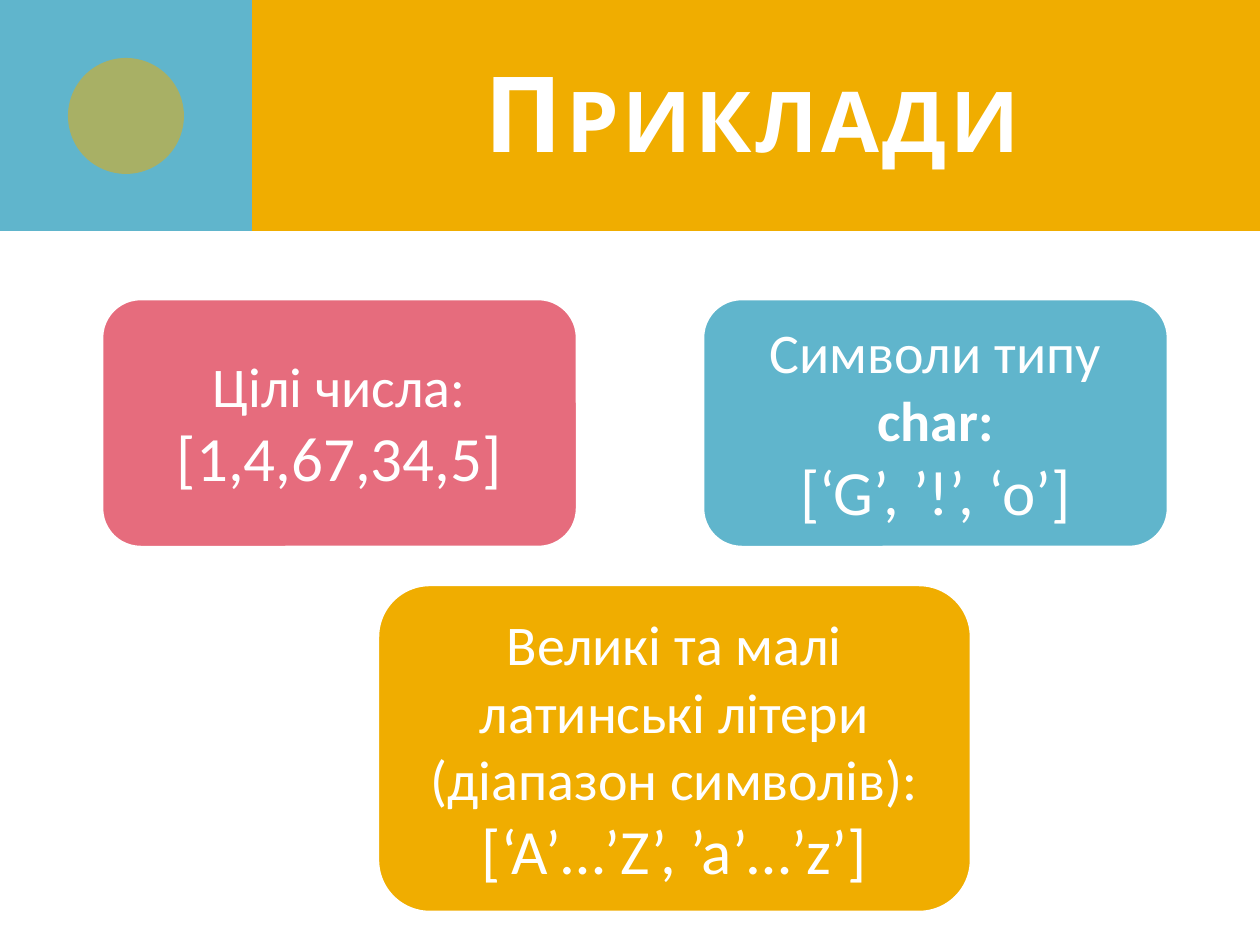
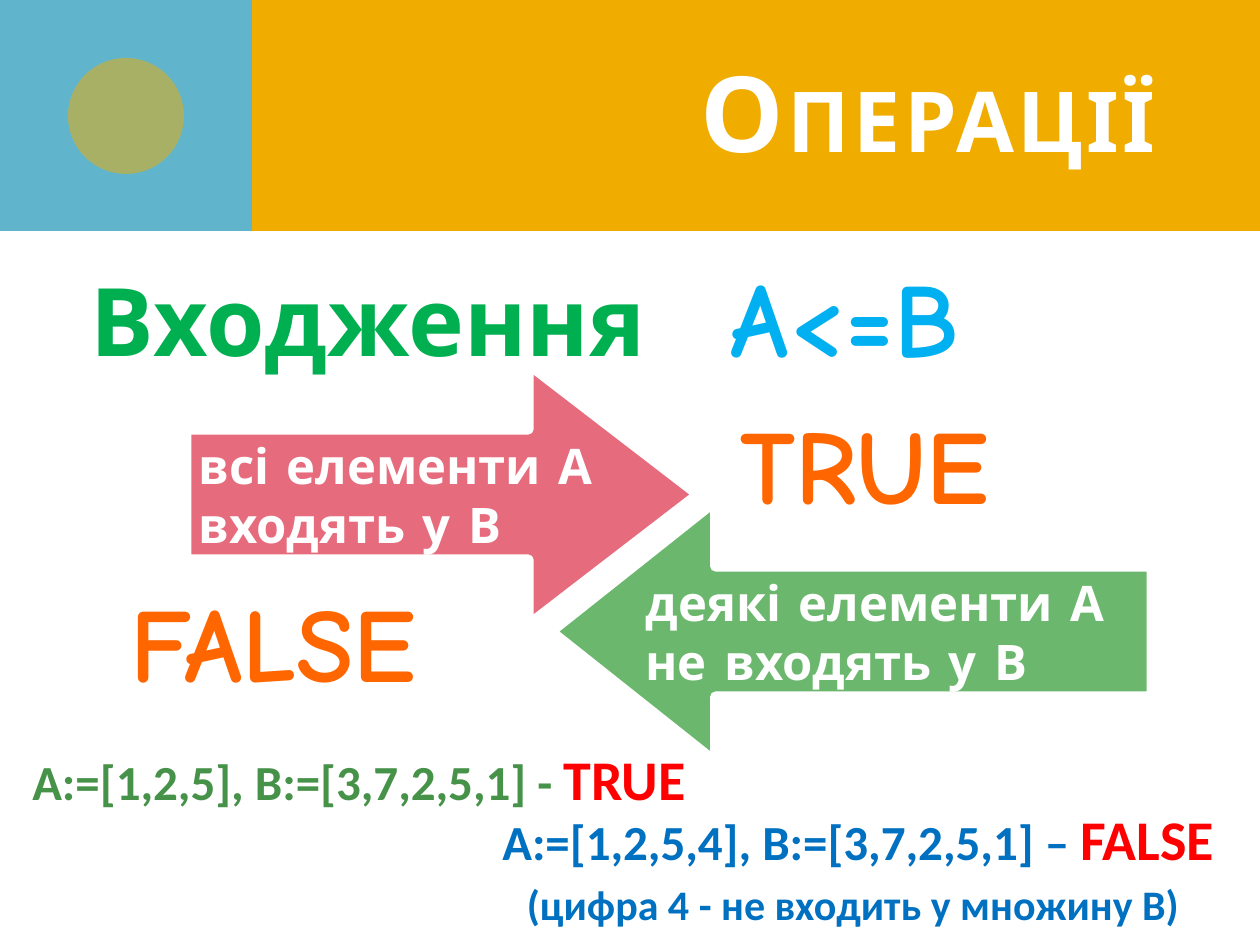
from dataclasses import dataclass
from typing import NamedTuple, Optional

import lxml.etree
import pptx
import pptx.dml.color
import pptx.enum.shapes
import pptx.enum.text
import pptx.oxml.ns
import pptx.util

EMU_PER_PX = 914400 / 126
COLORS = {
    "white": "FFFFFF",
    "amber": "F0AD00",
    "sky": "60B5CC",
    "rose": "E66C7D",
    "leaf": "6BB76D",
    "heading": "00B050",
    "formula": "00B0F0",
    "answer": "FF6600",
    "true_example": "479249",
    "false_example": "0070C0",
    "result": "FF0000",
}
DISPLAY_FONT = "Comic Neue"
BODY_FONT = "Calibri"
TITLE_ONLY_LAYOUT = 5
OUTLINE_POINTS = 6

SHAPES = pptx.enum.shapes.MSO_SHAPE
ALIGN = pptx.enum.text.PP_ALIGN
ANCHOR = pptx.enum.text.MSO_ANCHOR
AUTO_SIZE = pptx.enum.text.MSO_AUTO_SIZE


class Box(NamedTuple):
    left: int
    top: int
    width: int
    height: int


class Run(NamedTuple):
    text: str
    size: int
    color: str = "white"
    bold: bool = False
    font: str = BODY_FONT


@dataclass(frozen=True)
class Line:
    runs: tuple[Run, ...]
    align: pptx.enum.text.PP_ALIGN = ALIGN.LEFT


@dataclass(frozen=True)
class Panel:
    """A filled, white-outlined shape with text."""
    kind: pptx.enum.shapes.MSO_SHAPE
    box: Box
    fill: str
    lines: tuple[Line, ...]
    anchor: pptx.enum.text.MSO_ANCHOR
    adjustments: tuple[float, ...] = ()


@dataclass(frozen=True)
class Label:
    box: Box
    lines: tuple[Line, ...]
    wrap: bool = True


def card(box: Box, fill: str, caption: tuple[Run, ...], example: str) -> Panel:
    lines = (Line(caption, ALIGN.CENTER), Line((Run(example, 36),), ALIGN.CENTER))
    return Panel(SHAPES.ROUNDED_RECTANGLE, box, fill, lines, ANCHOR.MIDDLE)


def arrow(kind: pptx.enum.shapes.MSO_SHAPE, box: Box, fill: str, text: str, head: float) -> Panel:
    return Panel(kind, box, fill, display_line(text, 28, "white"), ANCHOR.TOP, (0.5, head))


def display_line(text: str, size: int, color: str) -> tuple[Line, ...]:
    return (Line((Run(text, size, color, True, DISPLAY_FONT),)),)


def example_line(text: str, color: str, result: str) -> Line:
    return Line((Run(text, 28, color, True), Run(result, 32, "result", True)))


CARDS = (
    card(Box(98, 295, 483, 256), "rose", (Run("Цілі числа:", 32),), "[1,4,67,34,5]"),
    card(Box(699, 295, 473, 256), "sky",
         (Run("Символи типу ", 32), Run("char:", 32, bold=True)), "[‘G’, ’!’, ‘o’]"),
    card(Box(374, 581, 601, 335), "amber",
         (Run("Великі та малі латинські літери (діапазон символів):", 32),),
         "[‘A’…’Z’, ’a’…’z’]"),
)
ARROWS = (
    arrow(SHAPES.LEFT_ARROW, Box(551, 501, 601, 261), "leaf",
          "деякі елементи А не входять у В", 0.63),
    arrow(SHAPES.RIGHT_ARROW, Box(186, 364, 512, 261), "rose",
          "всі елементи А входять у В", 0.65),
)
LABELS = (
    Label(Box(78, 256, 847, 127), display_line("Входження", 54, "heading")),
    Label(Box(718, 246, 493, 140), display_line("A<=B", 60, "formula")),
    Label(Box(728, 393, 344, 140), display_line("TRUE", 60, "answer")),
    Label(Box(118, 571, 394, 140), display_line("FALSE", 60, "answer")),
    Label(Box(20, 738, 709, 81),
          (example_line("A:=[1,2,5], B:=[3,7,2,5,1] - ", "true_example", "TRUE"),)),
    Label(Box(490, 798, 747, 140), (
        example_line("A:=[1,2,5,4], B:=[3,7,2,5,1] – ", "false_example", "FALSE"),
        Line((Run("(цифра 4 - не входить у множину В)", 24, "false_example", True),
              Run(" ", 28, "false_example", True)), ALIGN.CENTER),
    ), wrap=False),
)


def px(length: int) -> pptx.util.Emu:
    return pptx.util.Emu(round(length * EMU_PER_PX))


def rgb(name: str) -> pptx.dml.color.RGBColor:
    return pptx.dml.color.RGBColor.from_string(COLORS[name])


def format_run(run, style: Run) -> None:
    run.font.name = style.font
    run.font.size = pptx.util.Pt(style.size)
    run.font.bold = style.bold
    run.font.color.rgb = rgb(style.color)


def write_lines(text_frame, lines: tuple[Line, ...]) -> None:
    text_frame.text = "\n".join("" for _ in lines)
    for paragraph, line in zip(text_frame.paragraphs, lines):
        paragraph.alignment = line.align
        for style in line.runs:
            run = paragraph.add_run()
            run.text = style.text
            format_run(run, style)


def add_filled_shape(slide, kind: pptx.enum.shapes.MSO_SHAPE, box: Box, fill: str,
                     opacity: Optional[int] = None):
    shape = slide.shapes.add_shape(kind, *map(px, box))
    shape.shadow.inherit = False
    shape.fill.solid()
    shape.fill.fore_color.rgb = rgb(fill)
    shape.line.fill.background()
    if opacity is not None:
        color = shape._element.spPr.find(".//" + pptx.oxml.ns.qn("a:srgbClr"))
        alpha = lxml.etree.SubElement(color, pptx.oxml.ns.qn("a:alpha"))
        alpha.set("val", str(opacity * 1000))
    return shape


def add_panel(slide, panel: Panel) -> None:
    shape = add_filled_shape(slide, panel.kind, panel.box, panel.fill)
    shape.line.color.rgb = rgb("white")
    shape.line.width = pptx.util.Pt(OUTLINE_POINTS)
    for index, value in enumerate(panel.adjustments):
        shape.adjustments[index] = value
    shape.text_frame.word_wrap = True
    shape.text_frame.vertical_anchor = panel.anchor
    write_lines(shape.text_frame, panel.lines)


def add_label(slide, label: Label) -> None:
    text_frame = slide.shapes.add_textbox(*map(px, label.box)).text_frame
    text_frame.word_wrap = label.wrap
    text_frame.auto_size = AUTO_SIZE.SHAPE_TO_FIT_TEXT
    write_lines(text_frame, label.lines)


def add_titled_slide(presentation, text: str, align: pptx.enum.text.PP_ALIGN):
    """Add a slide with the header band and its title in small capitals."""
    slide = presentation.slides.add_slide(presentation.slide_layouts[TITLE_ONLY_LAYOUT])
    add_filled_shape(slide, SHAPES.RECTANGLE, Box(0, 0, 1260, 231), "amber")
    add_filled_shape(slide, SHAPES.RECTANGLE, Box(0, 0, 252, 231), "sky")
    add_filled_shape(slide, SHAPES.OVAL, Box(68, 58, 116, 116), "amber", opacity=50)

    title = slide.shapes.title
    slide.shapes._spTree.append(title._element)  # bring the title in front of the band
    title.left, title.top, title.width, title.height = map(px, Box(336, 32, 861, 158))
    title.text_frame.text = text
    title.text_frame.word_wrap = True
    title.text_frame.auto_size = AUTO_SIZE.NONE
    title.text_frame.vertical_anchor = ANCHOR.MIDDLE
    paragraph = title.text_frame.paragraphs[0]
    paragraph.alignment = align
    run = paragraph.runs[0]
    format_run(run, Run(text, 60, "white", True, DISPLAY_FONT))
    run_properties = run._r.get_or_add_rPr()
    run_properties.set("cap", "small")
    run_properties.set("spc", "200")
    return slide


def main() -> None:
    presentation = pptx.Presentation()
    presentation.slide_width, presentation.slide_height = px(1260), px(945)

    examples = add_titled_slide(presentation, "Приклади", ALIGN.CENTER)
    for panel in CARDS:
        add_panel(examples, panel)

    operations = add_titled_slide(presentation, "Операції", ALIGN.RIGHT)
    for panel in ARROWS:
        add_panel(operations, panel)
    for label in LABELS:
        add_label(operations, label)

    presentation.save("out.pptx")


if __name__ == "__main__":
    main()
